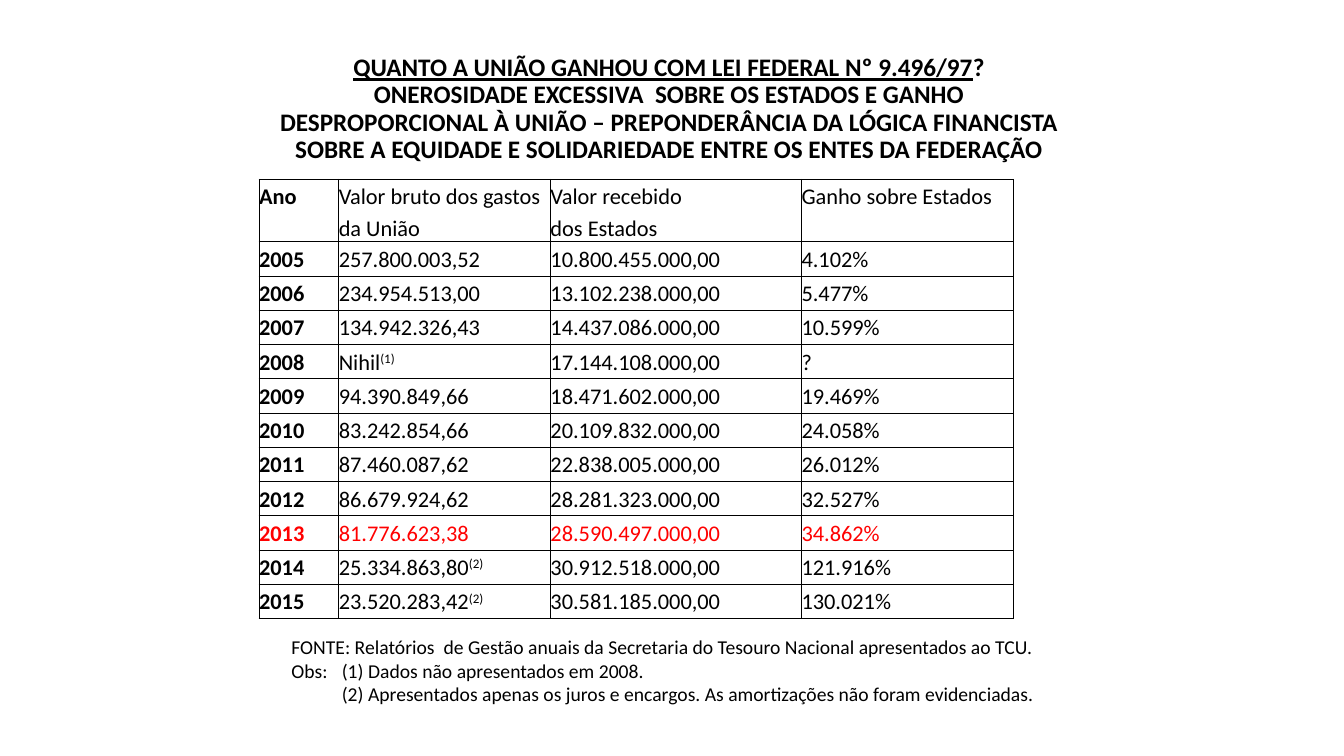
from dataclasses import dataclass
from typing import NamedTuple

from lxml import etree
from pptx import Presentation
from pptx import util as u
from pptx.dml.color import RGBColor
from pptx.enum import text
from pptx.oxml import ns


@dataclass(frozen=True)
class Theme:
    font: str = "Calibri"
    black: str = "000000"
    red: str = "FF0000"
    title_size: int = 18
    table_size: int = 16
    source_size: int = 14
    border_width: int = 1


class YearRow(NamedTuple):
    year: str
    spent: str
    received: str
    gain: str
    note: str = ""
    color: str = "000000"


THEME = Theme()
COLUMN_WIDTHS = (0.79, 2.1, 2.49, 2.1)
HEADER_HEIGHT = 0.62
ROW_HEIGHT = 0.34
HEADER = YearRow("Ano", "Valor bruto dos gastos da União", "Valor recebido\ndos Estados",
                 "Ganho sobre Estados")
YEARS = (
    YearRow("2005", "257.800.003,52", "10.800.455.000,00", "4.102%"),
    YearRow("2006", "234.954.513,00", "13.102.238.000,00", "5.477%"),
    YearRow("2007", "134.942.326,43", "14.437.086.000,00", "10.599%"),
    YearRow("2008", "Nihil", "17.144.108.000,00", "?", note="(1)"),
    YearRow("2009", "94.390.849,66", "18.471.602.000,00", "19.469%"),
    YearRow("2010", "83.242.854,66", "20.109.832.000,00", "24.058%"),
    YearRow("2011", "87.460.087,62", "22.838.005.000,00", "26.012%"),
    YearRow("2012", "86.679.924,62", "28.281.323.000,00", "32.527%"),
    YearRow("2013", "81.776.623,38", "28.590.497.000,00", "34.862%", color=THEME.red),
    YearRow("2014", "25.334.863,80", "30.912.518.000,00", "121.916%", note="(2)"),
    YearRow("2015", "23.520.283,42", "30.581.185.000,00", "130.021%", note="(2)"),
)
SOURCE_LINES = (
    "FONTE: Relatórios  de Gestão anuais da Secretaria do Tesouro Nacional apresentados ao TCU.",
    "Obs: \t(1) Dados não apresentados em 2008.",
    "\t(2) Apresentados apenas os juros e encargos. As amortizações não foram evidenciadas.",
)


def add_span(para, words: str, *, size: int, color: str = THEME.black, bold: bool = False,
             underline: bool = False, superscript: bool = False) -> None:
    span = para.add_run()
    span.text = words
    font = span.font
    font.name = THEME.font
    font.size = u.Pt(size)
    font.bold = bold
    font.underline = underline
    font.color.rgb = RGBColor.from_string(color)
    if superscript:
        span._r.get_or_add_rPr().set("baseline", "30000")


def add_box(page, left: float, top: float, width: float, height: float):
    box = page.shapes.add_textbox(*map(u.Inches, (left, top, width, height)))
    box.text_frame.word_wrap = True
    return box.text_frame


def next_para(frame, index: int):
    """Return the frame's first paragraph for index 0, otherwise a new one."""
    return frame.add_paragraph() if index else frame.paragraphs[0]


def add_title(page) -> None:
    frame = add_box(page, 2.57, 0.46, 8.13, 1.25)
    frame.vertical_anchor = text.MSO_ANCHOR.MIDDLE
    para = frame.paragraphs[0]
    para.alignment = text.PP_ALIGN.CENTER
    para.line_spacing = 0.9
    style = {"size": THEME.title_size, "bold": True}
    add_span(para, "QUANTO A UNIÃO GANHOU COM LEI FEDERAL Nº 9.496/97", underline=True, **style)
    add_span(para, "?", **style)
    para.add_line_break()
    add_span(para, "ONEROSIDADE EXCESSIVA  SOBRE OS ESTADOS E GANHO DESPROPORCIONAL À UNIÃO – "
             "PREPONDERÂNCIA DA LÓGICA FINANCISTA SOBRE A EQUIDADE E SOLIDARIEDADE "
             "ENTRE OS ENTES DA FEDERAÇÃO", **style)


def format_cell(cell) -> None:
    """Clear margins and fill, and draw a border on all four sides."""
    cell.margin_left = cell.margin_right = cell.margin_top = cell.margin_bottom = 0
    properties = cell._tc.get_or_add_tcPr()
    for side in ("lnL", "lnR", "lnT", "lnB"):
        line = etree.SubElement(properties, ns.qn(f"a:{side}"),
                                w=str(u.Pt(THEME.border_width)))
        fill = etree.SubElement(line, ns.qn("a:solidFill"))
        etree.SubElement(fill, ns.qn("a:srgbClr"), val=THEME.black)
    cell.fill.background()


def fill_row(cells, row: YearRow) -> None:
    for column, words in enumerate((row.year, row.spent, row.received, row.gain)):
        cell = cells[column]
        format_cell(cell)
        for index, line in enumerate(words.split("\n")):
            para = next_para(cell.text_frame, index)
            para.line_spacing = 1.15
            add_span(para, line, size=THEME.table_size, color=row.color, bold=column == 0)
        if column == 1 and row.note:
            add_span(para, row.note, size=THEME.table_size, color=row.color, superscript=True)


def add_gains_table(page) -> None:
    rows = (HEADER, *YEARS)
    height = HEADER_HEIGHT + ROW_HEIGHT * len(YEARS)
    frame = page.shapes.add_table(len(rows), len(COLUMN_WIDTHS), u.Inches(2.57), u.Inches(1.78),
                                  u.Inches(sum(COLUMN_WIDTHS)), u.Inches(height))
    table = frame.table
    table.first_row = table.horz_banding = False
    for column, width in zip(table.columns, COLUMN_WIDTHS):
        column.width = u.Inches(width)
    for index, row in enumerate(rows):
        table.rows[index].height = u.Inches(ROW_HEIGHT if index else HEADER_HEIGHT)
        fill_row(table.rows[index].cells, row)


def add_source(page) -> None:
    frame = add_box(page, 2.84, 6.25, 7.66, 1.04)
    frame.margin_left = frame.margin_right = u.Inches(0.05)
    frame.auto_size = text.MSO_AUTO_SIZE.SHAPE_TO_FIT_TEXT
    for index, line in enumerate(SOURCE_LINES):
        add_span(next_para(frame, index), line, size=THEME.source_size)


def main() -> None:
    deck = Presentation()
    deck.slide_width = u.Inches(13.33)
    deck.slide_height = u.Inches(7.5)
    page = deck.slides.add_slide(deck.slide_layouts[6])
    add_title(page)
    add_gains_table(page)
    add_source(page)
    deck.save("out.pptx")


if __name__ == "__main__":
    main()
